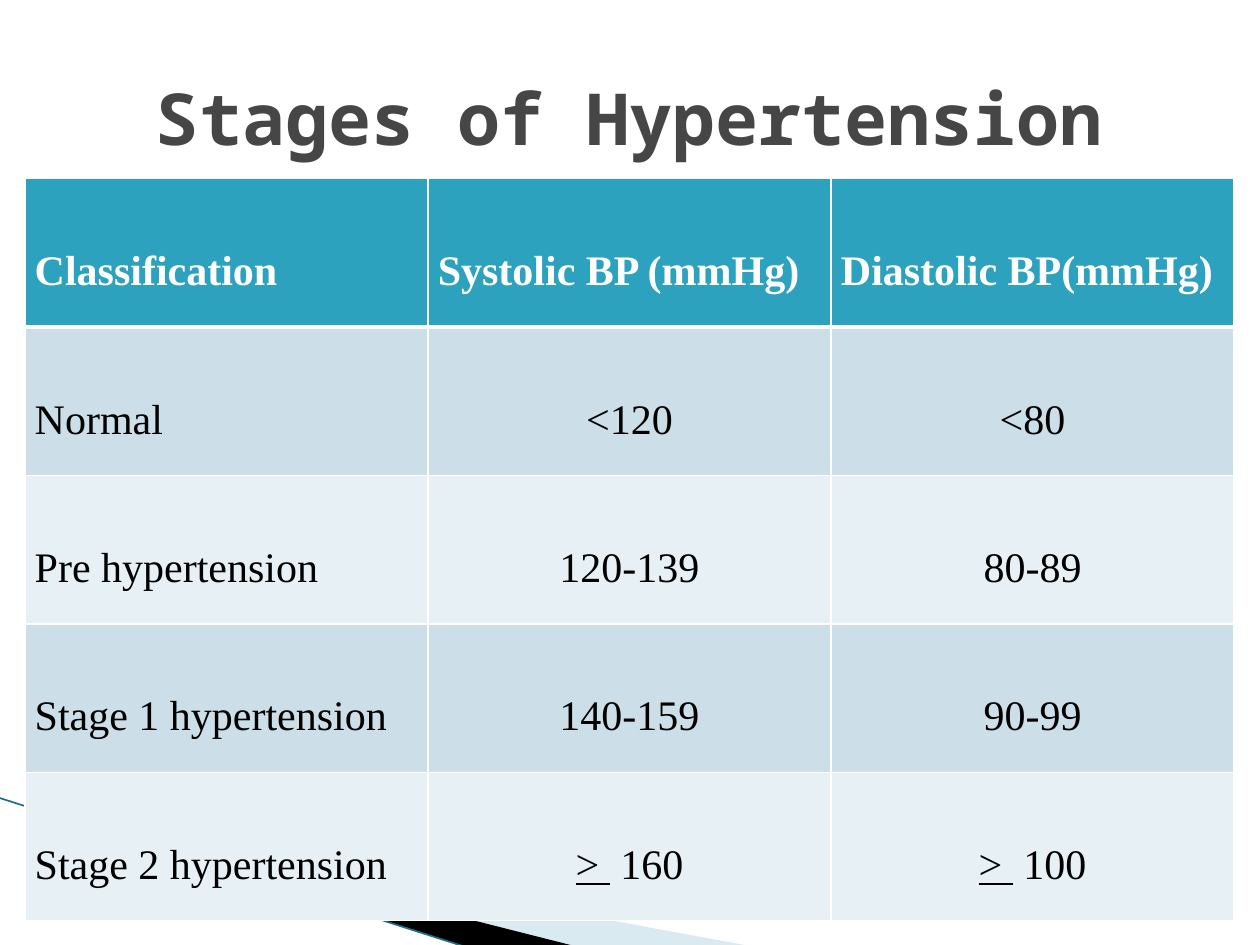
from lxml.etree import SubElement as Sub
from pptx import Presentation as Deck
from pptx.dml.color import RGBColor as Rgb
from pptx.enum.shapes import MSO_CONNECTOR as Link
from pptx.enum.text import MSO_ANCHOR as Anchor, PP_ALIGN as Align
from pptx.oxml.ns import qn
from pptx.util import Cm, Pt

HUES = {
    "white": "FFFFFF", "black": "000000", "title": "464646",
    "head": "2DA2BF", "odd": "CCDFE8", "even": "E7F0F4",
    "pale": "A0CBDC", "teal": "1B7087",
}
ROWS = [
    [["Classification"], ["Systolic BP (mmHg)"], ["Diastolic BP(mmHg)"]],
    [["Normal"], ["<120"], ["<80"]],
    [["Pre hypertension"], ["120-139"], ["80-89"]],
    [["Stage 1 hypertension"], ["140-159"], ["90-99"]],
    [["Stage 2 hypertension"], ["> ", " 160"], ["> ", " 100"]],
]


class Page:
    """Holds the style and the current slide."""

    def __init__(self, slide):
        self.shapes = slide.shapes
        self.sans = "Noto Sans Mono"
        self.serif = "Times New Roman"

    def hue(self, name):
        return Rgb.from_string(HUES[name])

    def font(self, run, face, size, hue, bold):
        font = run.font
        font.name, font.size, font.bold = face, Pt(size), bold
        font.color.rgb = self.hue(hue)

    def frame(self, shape, box):
        left, top, width, height = map(Cm, box)
        shift = {"x": shape.left - left, "y": shape.top - top}
        track = shape._element.find(".//" + qn("a:path"))
        for spot in track.iter(qn("a:pt")):
            for axis, gap in shift.items():
                spot.set(axis, str(int(spot.get(axis)) + gap))
        track.set("w", str(width))
        track.set("h", str(height))
        shape.left, shape.top = left, top
        shape.width, shape.height = width, height

    def wedge(self, points, hue, box, alpha=None):
        spots = [(Cm(x), Cm(y)) for x, y in points]
        pen = self.shapes.build_freeform(*spots[0], scale=1.0)
        pen.add_line_segments(spots[1:], close=True)
        shape = pen.convert_to_shape()
        self.frame(shape, box)
        shape.shadow.inherit = False
        shape.fill.solid()
        shape.fill.fore_color.rgb = self.hue(hue)
        shape.line.fill.background()
        if alpha:
            tint = shape.fill._xPr.find(".//" + qn("a:srgbClr"))
            Sub(tint, qn("a:alpha"), val=str(alpha * 1000))

    def line(self, start, end, hue, width):
        ends = [Cm(n) for n in (*start, *end)]
        line = self.shapes.add_connector(Link.STRAIGHT, *ends)
        line.line.color.rgb = self.hue(hue)
        line.line.width = Pt(width)
        Sub(line._element.spPr, qn("a:effectLst"))

    def title(self, text, *box):
        frame = self.shapes.add_textbox(*map(Cm, box)).text_frame
        frame.word_wrap = True
        frame.vertical_anchor = Anchor.MIDDLE
        frame.text = text
        para = frame.paragraphs[0]
        para.alignment = Align.CENTER
        self.font(para.runs[0], self.sans, 41, "title", True)

    def edge(self, cell, side, width):
        line = Sub(cell._tc.get_or_add_tcPr(), qn("a:ln" + side), w=str(Pt(width)))
        fill = Sub(line, qn("a:solidFill"))
        Sub(fill, qn("a:srgbClr"), val=HUES["white"])

    def cell(self, cell, row, col, parts):
        head = row == 0
        cell.margin_left = cell.margin_right = Cm(0.2)
        cell.margin_top = cell.margin_bottom = 0
        for side in "LRTB":
            thick = (row, side) in [(0, "B"), (1, "T")]
            self.edge(cell, side, 3 if thick else 1)
        cell.fill.solid()
        band = "head" if head else "odd" if row % 2 else "even"
        cell.fill.fore_color.rgb = self.hue(band)
        para = cell.text_frame.paragraphs[0]
        para.line_spacing = 2.5
        para.alignment = Align.LEFT if head or col == 0 else Align.CENTER
        for part in parts:
            run = para.add_run()
            run.text = part
            self.font(run, self.serif, 24, "white" if head else "black", head)
            run.font.underline = part == "> "

    def table(self, rows, *box):
        size = len(rows), len(rows[0])
        grid = self.shapes.add_table(*size, *map(Cm, box)).table
        for row, cells in enumerate(rows):
            for col, parts in enumerate(cells):
                self.cell(grid.cell(row, col), row, col, parts)


def main():
    deck = Deck()
    deck.slide_width, deck.slide_height = Cm(25.4), Cm(19.05)
    page = Page(deck.slides.add_slide(deck.slide_layouts[6]))
    pale = [(1.4, 16.54), (15.11, 19.07), (11.58, 19.07), (1.4, 16.51)]
    page.wedge(pale, "pale", (1.98, 13.89, 10.57, 4.01), 40)
    black = [(1.35, 16.48), (11.58, 19.07), (9.45, 19.1), (1.37, 16.51)]
    page.wedge(black, "black", (-0.15, 16.08, 10.57, 2.34))
    page.line((-0.03, 16.08), (9.42, 19.1), "teal", 0.95)
    page.table(ROWS, 0.5, 3.6, 24.38, 14.96)
    page.title("Stages of Hypertension", 1.27, 0.76, 22.86, 3.18)
    deck.save("out.pptx")


if __name__ == "__main__":
    main()
